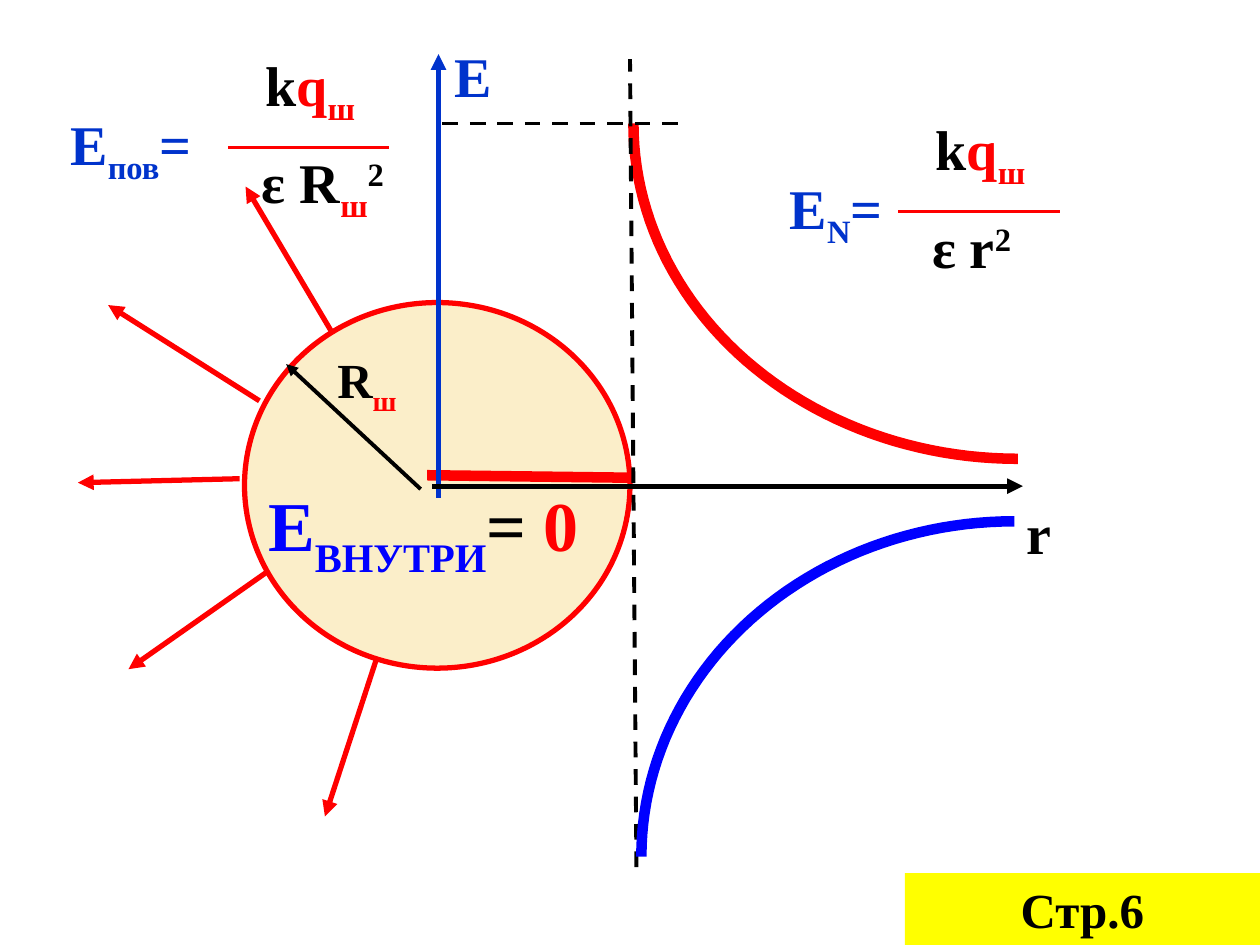
from math import cos, radians, sin

from lxml.etree import SubElement
from pptx import Presentation
from pptx.dml.color import RGBColor
from pptx.enum.dml import MSO_LINE
from pptx.enum.shapes import MSO_CONNECTOR, MSO_SHAPE
from pptx.enum.text import MSO_ANCHOR, PP_ALIGN
from pptx.oxml.ns import qn
from pptx.util import Cm, Pt

COLORS = {
    "red": "FF0000",
    "blue": "0000FF",
    "axis": "0033CC",
    "black": "000000",
    "sphere": "FBEEC9",
    "yellow": "FFFF00",
}
SUB, SUPER = -25, 30


def color(name):
    return RGBColor.from_string(COLORS[name])


class FieldDiagram:
    """Draws on one slide; all lengths are in centimetres."""

    font = "Times New Roman"

    def __init__(self, slide):
        self.shapes = slide.shapes

    def outline(self, line, ink, width):
        line.color.rgb = color(ink)
        line.width = Pt(width)

    def line(self, start, end, ink, width=3, arrow=False, dashed=False):
        connector = self.shapes.add_connector(
            MSO_CONNECTOR.STRAIGHT, *map(Cm, start + end))
        self.outline(connector.line, ink, width)
        if dashed:
            connector.line.dash_style = MSO_LINE.DASH
        properties = connector._element.spPr
        if arrow:
            SubElement(properties.find(qn("a:ln")), qn("a:tailEnd"), type="triangle")
        SubElement(properties, qn("a:effectLst"))

    def curve(self, center, radii, first, last, ink, width=6, steps=48):
        """Draw an open elliptical arc between two angles in degrees."""
        angles = [radians(first + (last - first) * i / steps) for i in range(steps + 1)]
        points = [(Cm(center[0] + radii[0] * cos(a)), Cm(center[1] + radii[1] * sin(a)))
                  for a in angles]
        builder = self.shapes.build_freeform(*points[0])
        builder.add_line_segments(points[1:], close=False)
        arc = builder.convert_to_shape()
        arc.shadow.inherit = False
        arc.fill.background()
        self.outline(arc.line, ink, width)

    def shape(self, kind, box, fill, ink=None):
        shape = self.shapes.add_shape(kind, *map(Cm, box))
        shape.shadow.inherit = False
        shape.fill.solid()
        shape.fill.fore_color.rgb = color(fill)
        if ink:
            self.outline(shape.line, ink, 3)
        else:
            shape.line.fill.background()
        return shape

    def add_runs(self, frame, runs, size):
        """Add runs given as (text, colour, baseline shift in percent)."""
        for text, ink, shift in runs:
            run = frame.paragraphs[0].add_run()
            run.text = text
            run.font.name = self.font
            run.font.size = Pt(size)
            run.font.bold = True
            run.font.color.rgb = color(ink)
            if shift:
                run._r.get_or_add_rPr().set("baseline", str(shift * 1000))

    def text(self, box, runs, size=32, wrap=True, anchor=MSO_ANCHOR.TOP):
        frame = self.shapes.add_textbox(*map(Cm, box)).text_frame
        frame.word_wrap = wrap
        frame.vertical_anchor = anchor
        self.add_runs(frame, runs, size)

    def fraction(self, x, y, denominator):
        """Put the charge term over a denominator, with the bar starting at x, y."""
        self.line((x, y), (x + 3.25, y), "red", 1.5)
        self.text((x + 0.5, y - 2.08, 3.05, 2.21),
                  [("k", "black", 0), ("q", "red", 0), ("ш", "red", SUB)])
        self.text((x + 0.43, y - 0.12, 3.33, 2.21), denominator)

    def banner(self, box, label, size):
        frame = self.shape(MSO_SHAPE.RECTANGLE, box, "yellow").text_frame
        frame.paragraphs[0].alignment = PP_ALIGN.CENTER
        self.add_runs(frame, [(label, "black", 0)], size)


def main():
    presentation = Presentation()
    presentation.slide_width, presentation.slide_height = Cm(25.4), Cm(19.05)
    diagram = FieldDiagram(
        presentation.slides.add_slide(presentation.slide_layouts[6]))

    diagram.curve((20.52, 2.49), (7.75, 6.76), 90, 180, "red")
    diagram.shape(MSO_SHAPE.OVAL, (4.93, 6.1, 7.77, 7.37), "sphere", "red")

    # Field strength outside the sphere
    diagram.text((15.67, 3.38, 3, 2.18),
                 [("Е", "axis", 0), ("N", "axis", SUB), ("=", "axis", 0)])
    diagram.fraction(18.11, 4.27, [("ε r", "black", 0), ("2", "black", SUPER)])

    # Axes and the graph inside the sphere
    diagram.line((12.83, 17.48), (12.7, 1.19), "black", 2.25, dashed=True)
    diagram.line((8.61, 9.58), (12.7, 9.63), "red", 6)
    diagram.line((8.84, 10.03), (8.84, 1.09), "axis", arrow=True)
    diagram.line((8.71, 9.8), (20.62, 9.8), "black", arrow=True)
    diagram.text((20.45, 9.93, 1.02, 1.63), [("r", "black", 0)], wrap=False)
    diagram.text((8.92, 0.71, 1.78, 1.78), [("Е", "axis", 0)])

    field_lines = [
        ((6.68, 6.68), (4.95, 3.76)),
        ((5.23, 8.08), (2.18, 6.15)),
        ((4.83, 9.65), (1.57, 9.73)),
        ((5.41, 11.51), (2.59, 13.49)),
        ((7.59, 13.28), (6.55, 16.46)),
    ]
    for start, end in field_lines:
        diagram.line(start, end, "red", arrow=True)

    diagram.text((5.16, 9.73, 8.13, 1.96),
                 [("E", "blue", 0), ("ВНУТРИ", "blue", -30),
                  ("= ", "black", 0), ("0", "red", 0)],
                 size=40, anchor=MSO_ANCHOR.MIDDLE)

    # Field strength at the surface
    diagram.line((8.92, 2.49), (13.87, 2.49), "black", 2.25, dashed=True)
    diagram.text((1.17, 2.08, 3.99, 2.18),
                 [("Е", "axis", 0), ("пов", "axis", SUB), ("=", "axis", 0)])
    diagram.fraction(4.6, 2.97, [("ε R", "black", 0), ("ш", "red", SUB),
                                 ("2", "black", SUPER)])

    # Radius of the sphere
    diagram.text((6.55, 6.93, 1.8, 1.45),
                 [("R", "black", 0), ("ш", "red", SUB)], size=28, wrap=False)
    diagram.line((8.48, 9.86), (5.77, 7.34), "black", 2.25, arrow=True)

    diagram.curve((20.45, 17.27), (7.52, 6.76), 270, 180, "blue")
    diagram.banner((18.24, 17.6, 7.16, 1.45), "Стр.6", 28)

    presentation.save("out.pptx")


if __name__ == "__main__":
    main()
